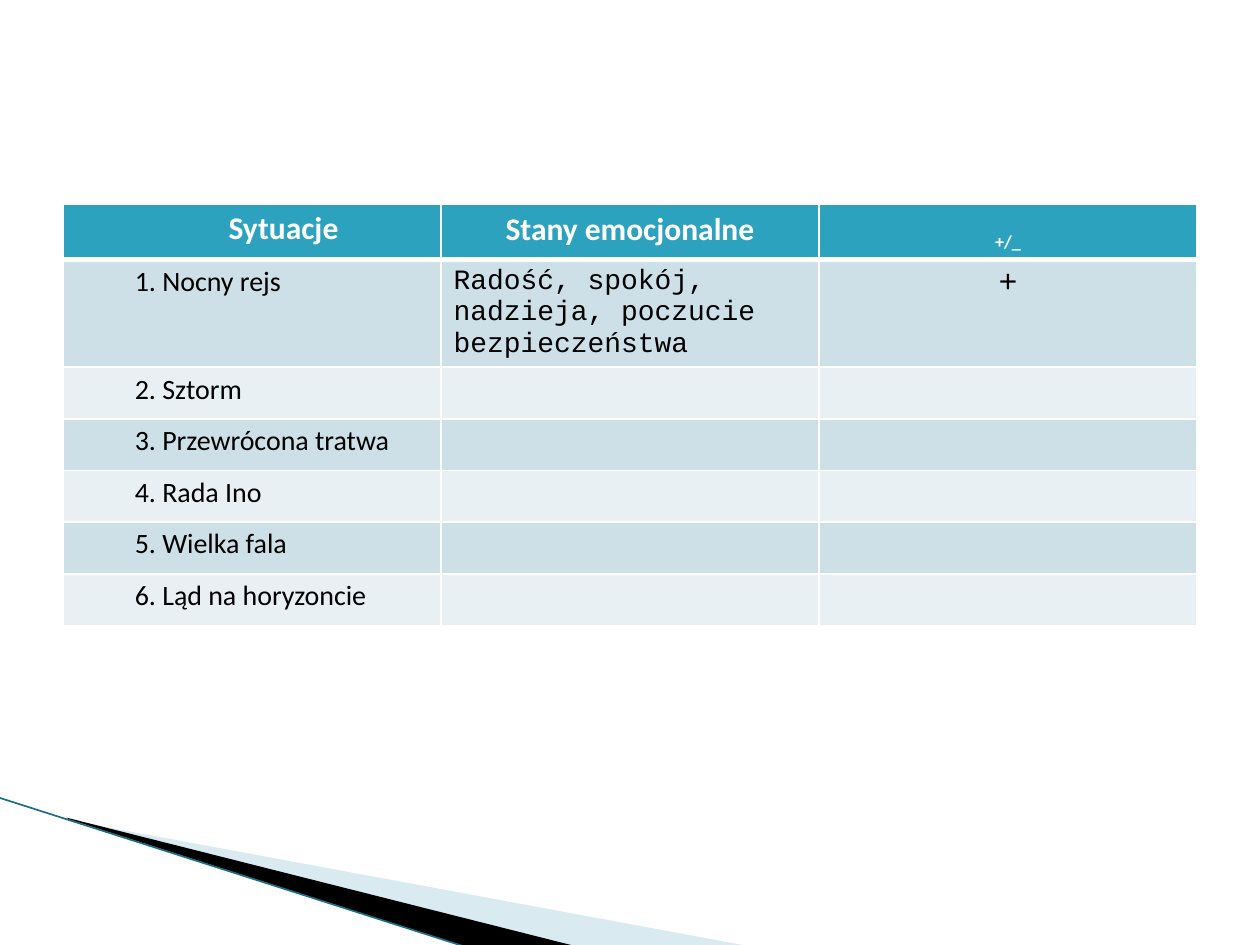
import pptx
import pptx.util
import pptx.dml.color
import pptx.enum.shapes
import pptx.enum.text
import pptx.oxml.ns
from lxml import etree

Inches = pptx.util.Inches
Pt = pptx.util.Pt
RGB = pptx.dml.color.RGBColor
CENTER = pptx.enum.text.PP_ALIGN.CENTER
qn = pptx.oxml.ns.qn

WHITE = RGB(0xFF, 0xFF, 0xFF)
BLACK = RGB(0, 0, 0)
TEAL = RGB(0x2D, 0xA2, 0xBF)
DARK = RGB(0x1A, 0x6F, 0x82)
SKY = RGB(0xA0, 0xCB, 0xDC)
BANDS = [RGB(0xCD, 0xE0, 0xE8), RGB(0xE8, 0xF0, 0xF4)]

HEADS = ["Sytuacje", "Stany emocjonalne", "+/_"]
ROWS = [
    ["1. Nocny rejs", "Radość, spokój, nadzieja, poczucie bezpieczeństwa", "+"],
    ["2. Sztorm", "", ""],
    ["3. Przewrócona tratwa", "", ""],
    ["4. Rada Ino", "", ""],
    ["5. Wielka fala", "", ""],
    ["6. Ląd na horyzoncie", "", ""],
]
WEDGES = [
    ([(0.55, 6.51), (5.95, 7.51), (4.56, 7.51), (0.55, 6.5)], SKY, 40),
    ([(0.53, 6.49), (4.57, 7.51), (3.72, 7.52), (0.54, 6.5)], BLACK, 100),
]


def add_wedge(slide, points, color, alpha):
    spots = [(Inches(x), Inches(y)) for x, y in points]
    form = slide.shapes.build_freeform(*spots[0])
    form.add_line_segments(spots[1:], close=True)
    shape = form.convert_to_shape()
    shape.shadow.inherit = False
    shape.line.fill.background()
    shape.fill.solid()
    shape.fill.fore_color.rgb = color
    if alpha < 100:
        tint = shape.fill._xPr.find(qn("a:solidFill"))[0]
        etree.SubElement(tint, qn("a:alpha")).set("val", str(alpha * 1000))


def add_edge(slide):
    edge = slide.shapes.add_connector(
        pptx.enum.shapes.MSO_CONNECTOR.STRAIGHT,
        Inches(-0.01), Inches(6.33), Inches(3.71), Inches(7.52))
    edge.line.color.rgb = DARK
    edge.line.width = Pt(0.95)
    etree.SubElement(edge._element.spPr, qn("a:effectLst"))


def set_border(cell, head):
    props = cell._tc.get_or_add_tcPr()
    for side in "LRTB":
        width = 3 if head and side == "B" else 1
        line = etree.SubElement(props, qn("a:ln" + side), w=str(Pt(width)))
        fill = etree.SubElement(line, qn("a:solidFill"))
        etree.SubElement(fill, qn("a:srgbClr"), val=str(WHITE))


def fill_cell(cell, text, row, col):
    head = row == 0
    set_border(cell, head)
    cell.fill.solid()
    cell.fill.fore_color.rgb = TEAL if head else BANDS[(row - 1) % 2]
    if not text:
        return
    para = cell.text_frame.paragraphs[0]
    if col == 0:
        cell.margin_left = cell.margin_right = Inches(0.07)
        cell.margin_top = cell.margin_bottom = 0
        para._p.get_or_add_pPr().set("marL", str(Inches(0.5)))
        para.line_spacing = 1.15
    if head or col == 2:
        para.alignment = CENTER
    run = para.add_run()
    run.text = text
    font = run.font
    font.name = "Calibri" if head or col == 0 else "Courier New"
    font.size = Pt(18 if head or col == 2 else 16)
    font.bold = head
    font.color.rgb = WHITE if head else BLACK
    if head and col == 2:
        run._r.get_or_add_rPr().set("baseline", "-25000")


def add_grid(slide):
    data = [HEADS] + ROWS
    table = slide.shapes.add_table(
        len(data), len(HEADS), Inches(0.5), Inches(1.62),
        Inches(9), Inches(0.41 * len(data))).table
    for row, texts in enumerate(data):
        for col, text in enumerate(texts):
            fill_cell(table.cell(row, col), text, row, col)


def main():
    deck = pptx.Presentation()
    deck.slide_width, deck.slide_height = Inches(10), Inches(7.5)
    slide = deck.slides.add_slide(deck.slide_layouts[6])
    for wedge in WEDGES:
        add_wedge(slide, *wedge)
    add_edge(slide)
    add_grid(slide)
    deck.save("out.pptx")


if __name__ == "__main__":
    main()
